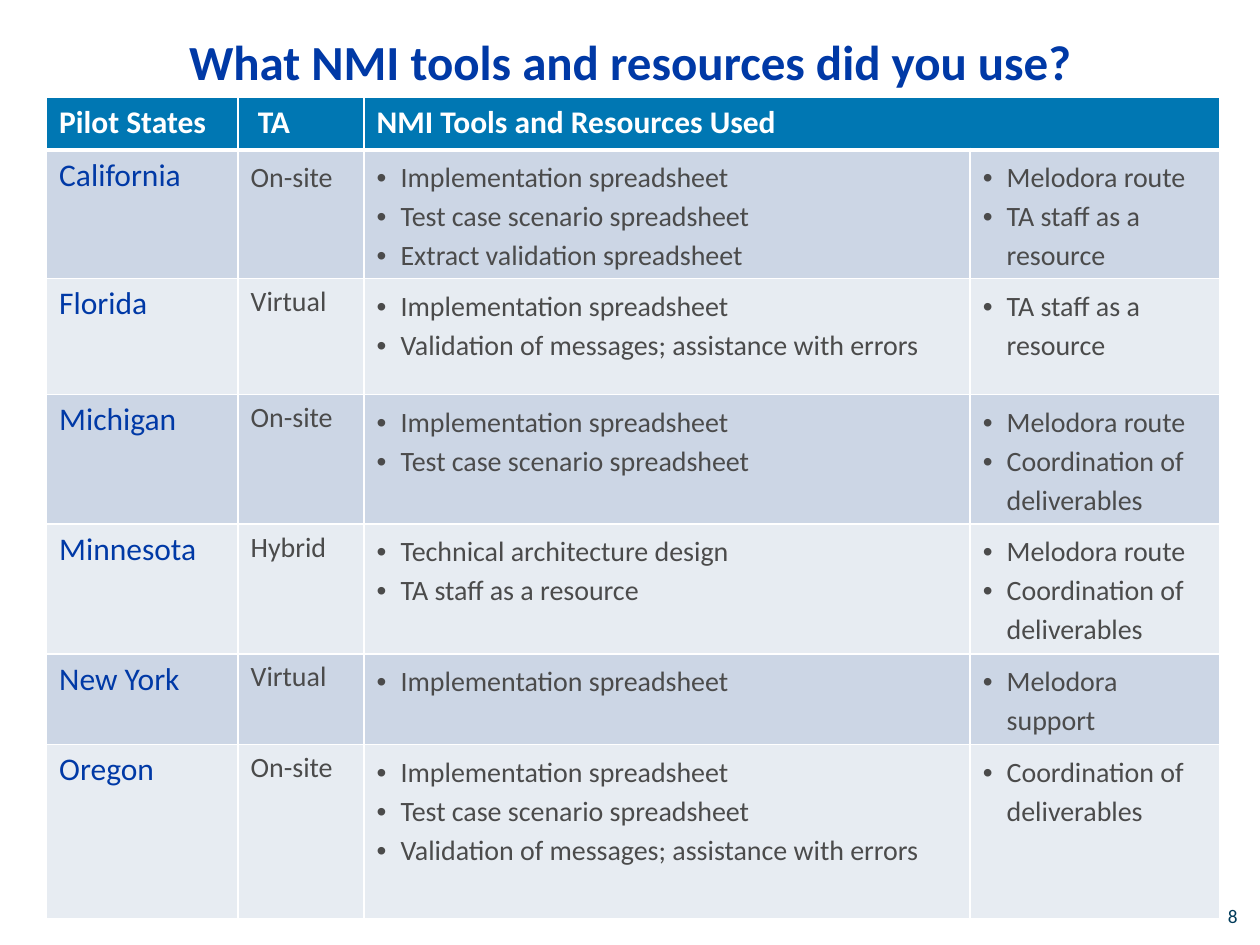
from lxml import etree
from pptx import Presentation
from pptx.dml.color import RGBColor
from pptx.enum import text as tx
from pptx.oxml.ns import qn
from pptx.util import Inches, Pt

COLORS = {"title": "0039A6", "head": "0077B3", "odd": "CCD6E5", "even": "E7ECF2",
          "body": "4B4B4B", "line": "FFFFFF", "page": "003B5A"}
FONT = "Calibri"
TITLE = "What NMI tools and resources did you use?"
PAGE = "8"
HEADS = ["Pilot States", " TA", "NMI Tools and Resources Used"]

SHEET = "Implementation spreadsheet"
CASES = "Test case scenario spreadsheet"
CHECK = "Validation of messages; assistance with errors"
STAFF = "TA staff as a resource"
ROUTE = "Melodora route"
COORD = "Coordination of deliverables"
STATES = [
    ("California", "On-site", [SHEET, CASES, "Extract validation spreadsheet"], [ROUTE, STAFF]),
    ("Florida", "Virtual", [SHEET, CHECK], [STAFF]),
    ("Michigan", "On-site", [SHEET, CASES], [ROUTE, COORD]),
    ("Minnesota", "Hybrid", ["Technical architecture design", STAFF], [ROUTE, COORD]),
    ("New York", "Virtual", [SHEET], ["Melodora support"]),
    ("Oregon", "On-site", [SHEET, CASES, CHECK], [COORD]),
]
WIDTHS = [1.52, 1, 4.81, 1.98]
HEIGHTS = [0.42, 1.02, 0.92, 1.03, 1.03, 0.72, 1.38]


def rgb(key):
    return RGBColor.from_string(COLORS[key])


def write(par, words, size, color, bold=False):
    run = par.add_run()
    run.text = words
    font = run.font
    font.name, font.size, font.bold = FONT, Pt(size), bold
    font.color.rgb = rgb(color)


def label(slide, box, words, size, color, anchor, align, bold=False):
    frame = slide.shapes.add_textbox(*map(Inches, box)).text_frame
    frame.word_wrap = True
    frame.vertical_anchor = anchor
    par = frame.paragraphs[0]
    par.alignment = align
    write(par, words, size, color, bold)
    return par


def bullet(par):
    props = par._p.get_or_add_pPr()
    props.set("marL", str(Inches(0.19)))
    props.set("indent", str(Inches(-0.19)))
    etree.SubElement(props, qn("a:buFont"), typeface="Arial")
    etree.SubElement(props, qn("a:buChar"), char="•")
    par.line_spacing = 1.14


def paint(cell, color, base=1):
    """Fill the cell and rule its four sides; base is the bottom line width."""
    props = cell._tc.get_or_add_tcPr()
    for spot, side in enumerate("LRTB"):
        width = Pt(base if side == "B" else 1)
        line = etree.Element(qn("a:ln" + side), w=str(width))
        fill = etree.SubElement(line, qn("a:solidFill"))
        etree.SubElement(fill, qn("a:srgbClr"), val=COLORS["line"])
        props.insert(spot, line)
    cell.fill.solid()
    cell.fill.fore_color.rgb = rgb(color)


def fill_list(cell, items):
    frame = cell.text_frame
    for num, item in enumerate(items):
        par = frame.add_paragraph() if num else frame.paragraphs[0]
        bullet(par)
        write(par, item, 16, "body")


def add_grid(slide):
    box = map(Inches, (0.37, 0.77, sum(WIDTHS), sum(HEIGHTS)))
    grid = slide.shapes.add_table(len(HEIGHTS), len(WIDTHS), *box).table
    for col, width in zip(grid.columns, WIDTHS):
        col.width = Inches(width)
    for row, height in zip(grid.rows, HEIGHTS):
        row.height = Inches(height)

    for col in range(len(WIDTHS)):
        paint(grid.cell(0, col), "head", base=3)
    grid.cell(0, 2).merge(grid.cell(0, 3))
    for col, head in enumerate(HEADS):
        write(grid.cell(0, col).text_frame.paragraphs[0], head, 18, "line", True)

    for num, (state, mode, tools, more) in enumerate(STATES, 1):
        cells = [grid.cell(num, col) for col in range(len(WIDTHS))]
        for cell in cells:
            paint(cell, "odd" if num % 2 else "even", base=1)
            if num == 1:
                top = cell._tc.tcPr.find(qn("a:lnT"))
                top.set("w", str(Pt(3)))
        write(cells[0].text_frame.paragraphs[0], state, 18, "title")
        par = cells[1].text_frame.paragraphs[0]
        if num == 1:
            par.line_spacing = 1.14
        write(par, mode, 16, "body")
        fill_list(cells[2], tools)
        fill_list(cells[3], more)


def main():
    deck = Presentation()
    deck.slide_width, deck.slide_height = Inches(10), Inches(7.5)
    slide = deck.slides.add_slide(deck.slide_layouts[6])
    label(slide, (7.59, 7.07, 2.33, 0.4), PAGE, 11, "page",
          tx.MSO_ANCHOR.MIDDLE, tx.PP_ALIGN.RIGHT)
    title = label(slide, (0.5, 0.21, 9, 0.56), TITLE, 28, "title",
                  tx.MSO_ANCHOR.BOTTOM, tx.PP_ALIGN.CENTER, True)
    title.line_spacing = Pt(30)
    add_grid(slide)
    deck.save("out.pptx")


if __name__ == "__main__":
    main()
